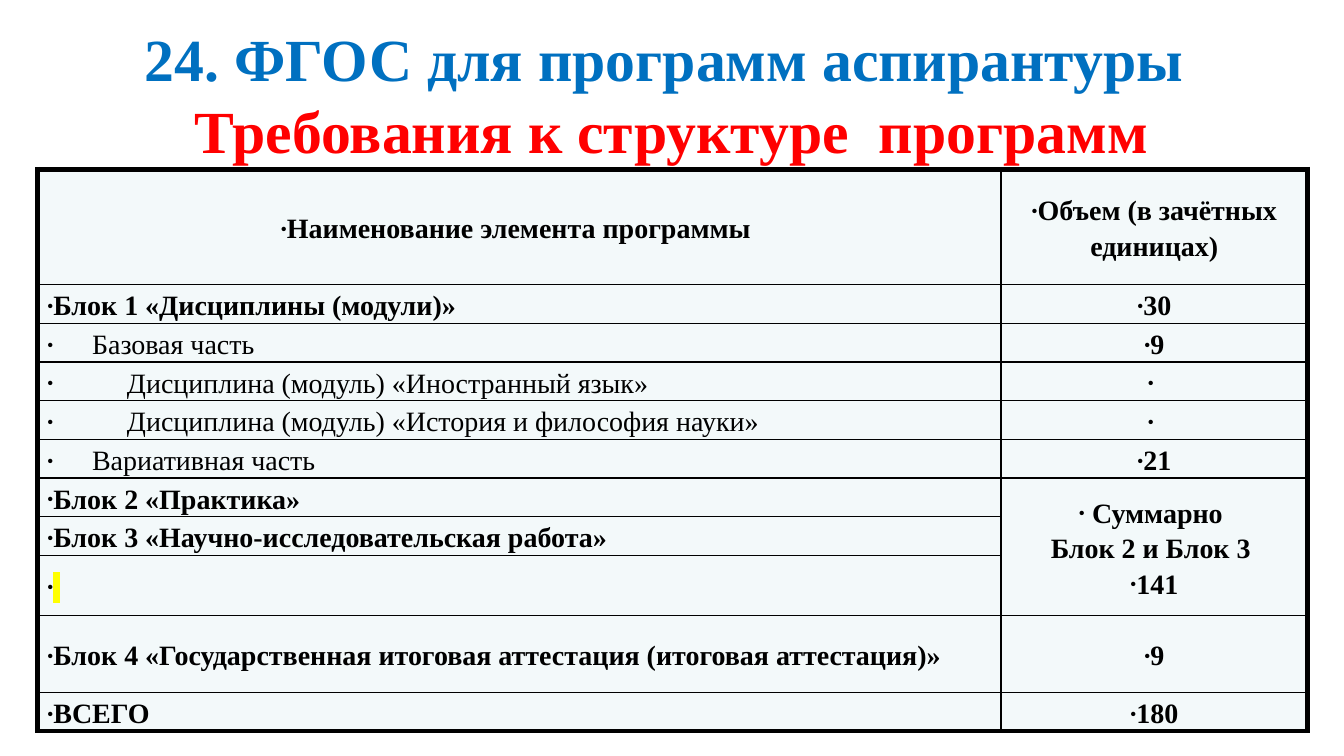
from lxml import etree
from pptx import Presentation
from pptx import util as u
from pptx.dml import color
from pptx.enum import text
from pptx.oxml import ns

COLORS = {
    "heading": "0070C0",
    "subheading": "FF0000",
    "text": "000000",
    "cell": "F3F9FA",
    "highlight": "FFFF00",
}
FONT = "Times New Roman"
COLUMN_WIDTHS = [18.21, 5.79]
ROW_HEIGHTS = [2.18] + [0.73] * 7 + [1.14, 1.45, 0.73]
INDENTS = [0, 0.85, 1.51]
BLANK = "\N{NO-BREAK SPACE}"
ROWS = [
    (0, "Наименование элемента программы ", ["Объем (в зачётных единицах)"]),
    (0, "Блок 1 «Дисциплины (модули)»", ["30"]),
    (1, "Базовая часть", ["9"]),
    (2, "Дисциплина (модуль) «Иностранный язык»", [BLANK]),
    (2, "Дисциплина (модуль) «История и философия науки»", [BLANK]),
    (1, "Вариативная часть", ["21"]),
    (0, "Блок 2 «Практика»", [BLANK + "Суммарно \vБлок 2 и Блок 3 ", "141"]),
    (0, "Блок 3 «Научно-исследовательская работа»", []),
    (0, BLANK, []),
    (0, "Блок 4 «Государственная итоговая аттестация (итоговая аттестация)»", ["9"]),
    (0, "ВСЕГО", ["180"]),
]
SHARED_VOLUME_ROWS = (6, 8)


def rgb(name):
    """Return the named colour."""
    return color.RGBColor.from_string(COLORS[name])


def add_element(parent, tag, **attributes):
    """Append a DrawingML element to its parent."""
    return etree.SubElement(parent, ns.qn(tag), attributes)


def set_font(font, size, bold):
    """Set typeface, size and weight."""
    font.name = FONT
    font.size = u.Pt(size)
    font.bold = bold


def add_title(slide):
    """Add the two-line title in two colours."""
    shape = slide.shapes.add_textbox(u.Cm(1.27), u.Cm(0.58), u.Cm(22.86), u.Cm(2.39))
    frame = shape.text_frame
    frame.word_wrap = True
    frame.vertical_anchor = text.MSO_ANCHOR.MIDDLE
    paragraph = frame.paragraphs[0]
    paragraph.alignment = text.PP_ALIGN.CENTER
    set_font(paragraph.font, 32, True)
    heading = paragraph.add_run()
    heading.text = "24. ФГОС для программ аспирантуры "
    heading.font.color.rgb = rgb("heading")
    paragraph.add_line_break()
    subheading = paragraph.add_run()
    subheading.text = "Требования к структуре  программ"
    subheading.font.color.rgb = rgb("subheading")


def add_bullet(paragraph, indent):
    """Give a paragraph a round bullet with a hanging indent."""
    properties = paragraph._p.get_or_add_pPr()
    properties.set("marL", str(u.Cm(indent)))
    properties.set("indent", str(-u.Cm(indent)))
    add_element(add_element(properties, "a:buClr"), "a:srgbClr", val=COLORS["text"])
    add_element(properties, "a:buSzPct", val="65000")
    add_element(properties, "a:buFont", typeface=FONT)
    add_element(properties, "a:buChar", char="•")


def fill_text(cell, lines, alignment, bold=True, indent=0):
    """Write bulleted paragraphs into a cell."""
    frame = cell.text_frame
    for index, line in enumerate(lines):
        paragraph = frame.add_paragraph() if index else frame.paragraphs[0]
        paragraph.text = line
        paragraph.alignment = alignment
        paragraph.line_spacing = 1.15
        add_bullet(paragraph, indent)
        set_font(paragraph.font, 15, bold)
        paragraph.font.color.rgb = rgb("text")


def highlight(run):
    """Mark a run with the highlight colour."""
    mark = add_element(run.font._element, "a:highlight")
    add_element(mark, "a:srgbClr", val=COLORS["highlight"])


def style_cell(cell, row, column):
    """Set margins, borders and fill, with thick borders on the table's edge."""
    cell.vertical_anchor = text.MSO_ANCHOR.MIDDLE
    cell.margin_left = cell.margin_right = u.Cm(0.18)
    cell.margin_top = cell.margin_bottom = 0
    outer_sides = {
        "a:lnL": column == 0,
        "a:lnR": column == len(COLUMN_WIDTHS) - 1,
        "a:lnT": row == 0,
        "a:lnB": row == len(ROWS) - 1,
    }
    properties = cell._tc.get_or_add_tcPr()
    for side, is_outer in outer_sides.items():
        line = add_element(properties, side, w=str(u.Pt(3 if is_outer else 1)))
        add_element(add_element(line, "a:solidFill"), "a:srgbClr", val=COLORS["text"])
    cell.fill.solid()
    cell.fill.fore_color.rgb = rgb("cell")


def add_structure_table(slide):
    """Add the table of programme elements and their volume."""
    table = slide.shapes.add_table(
        len(ROWS), len(COLUMN_WIDTHS), u.Cm(0.71), u.Cm(3.2),
        u.Cm(sum(COLUMN_WIDTHS)), u.Cm(sum(ROW_HEIGHTS)),
    ).table
    table.first_row = table.horz_banding = False
    for column, width in zip(table.columns, COLUMN_WIDTHS):
        column.width = u.Cm(width)
    for row, height in zip(table.rows, ROW_HEIGHTS):
        row.height = u.Cm(height)
    for index, (level, name, volume) in enumerate(ROWS):
        name_cell, volume_cell = table.cell(index, 0), table.cell(index, 1)
        style_cell(name_cell, index, 0)
        style_cell(volume_cell, index, 1)
        alignment = text.PP_ALIGN.LEFT if index else text.PP_ALIGN.CENTER
        fill_text(name_cell, [name], alignment, level == 0, INDENTS[level])
        fill_text(volume_cell, volume, text.PP_ALIGN.CENTER)
        if name == BLANK:
            highlight(name_cell.text_frame.paragraphs[0].runs[0])
    first, last = SHARED_VOLUME_ROWS
    table.cell(first, 1).merge(table.cell(last, 1))


def main():
    """Build and save the slide."""
    presentation = Presentation()
    presentation.slide_width = u.Cm(25.4)
    presentation.slide_height = u.Cm(14.29)
    slide = presentation.slides.add_slide(presentation.slide_layouts[6])
    add_title(slide)
    add_structure_table(slide)
    presentation.save("out.pptx")


if __name__ == "__main__":
    main()
